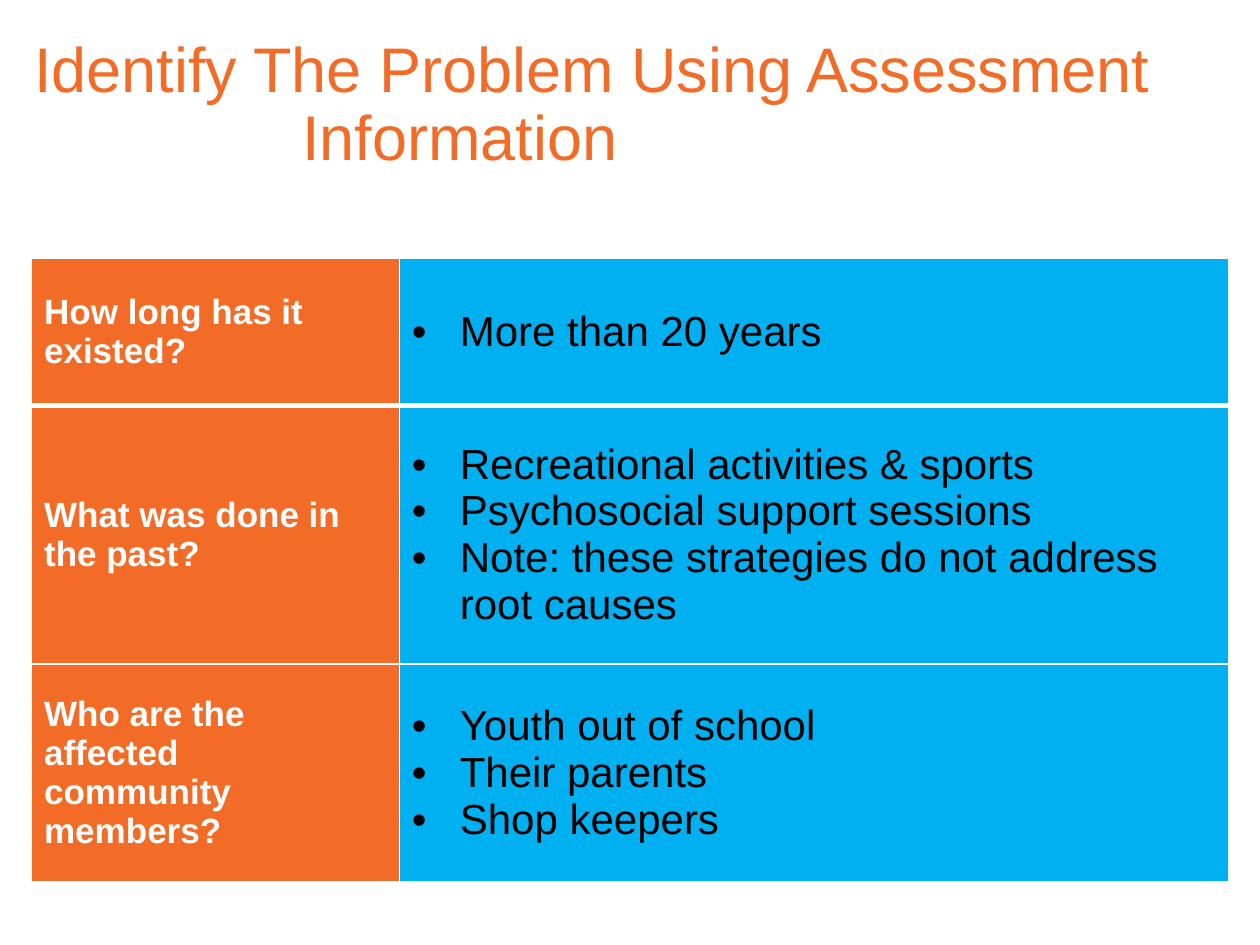
"""Build the slide that identifies the problem using assessment information."""
from lxml.etree import SubElement
from pptx import Presentation
from pptx.dml.color import RGBColor
from pptx.enum.text import MSO_ANCHOR, PP_ALIGN
from pptx.oxml.ns import qn
from pptx.util import Inches, Pt

ORANGE = RGBColor(0xF2, 0x6C, 0x27)
BLUE = RGBColor(0x00, 0xB0, 0xF0)
WHITE = RGBColor(0xFF, 0xFF, 0xFF)
BLACK = RGBColor(0x00, 0x00, 0x00)

ROWS = [
    (1.17, ["How long has it existed?"], ["More than 20 years"]),
    (2.05, ["What was done in the past?"], [
        "Recreational activities & sports",
        "Psychosocial support sessions",
        "Note: these strategies do not address root causes",
    ]),
    (1.73, ["Who are the affected", "community members?"],
     ["Youth out of school", "Their parents", "Shop keepers"]),
]
COLUMNS = [
    {"width": 2.92, "fill": ORANGE, "indent": 0,
     "font": {"name": "Arial", "size": Pt(20), "bold": True}, "color": WHITE},
    {"width": 6.58, "fill": BLUE, "indent": 0.38,
     "font": {"name": "Arial", "size": Pt(24), "bold": False}, "color": BLACK},
]


def add_text(p, text, font, color, indent):
    r = p.add_run()
    r.text = text
    for name, value in font.items():
        setattr(r.font, name, value)
    r.font.color.rgb = color
    pPr = p._p.get_or_add_pPr()
    pPr.set("marL", str(Inches(indent)))
    pPr.set("indent", str(-Inches(indent)))
    return pPr


def add_border(cell, side, width):
    ln = SubElement(cell._tc.get_or_add_tcPr(), qn(f"a:ln{side}"), w=str(Pt(width)))
    fill = SubElement(ln, qn("a:solidFill"))
    SubElement(fill, qn("a:srgbClr"), val=str(WHITE))


prs = Presentation()
prs.slide_width, prs.slide_height = Inches(10), Inches(7.5)
s = prs.slides.add_slide(prs.slide_layouts[5])

title = s.shapes.title
title.left, title.top = Inches(0.17), Inches(0.13)
title.width, title.height = Inches(9.5), Inches(1.42)
tf = title.text_frame
tf.word_wrap = True
tf.vertical_anchor = MSO_ANCHOR.MIDDLE
p = tf.paragraphs[0]
p.alignment = PP_ALIGN.LEFT
p.line_spacing = 0.9
add_text(p, "Identify The Problem Using Assessment Information",
         {"name": "Arial", "size": Pt(36)}, ORANGE, 2.13)

table = s.shapes.add_table(len(ROWS), len(COLUMNS), Inches(0.25), Inches(2.05),
                           Inches(9.5), Inches(4.95)).table
for i, (height, *texts) in enumerate(ROWS):
    table.rows[i].height = Inches(height)
    for j, (column, lines) in enumerate(zip(COLUMNS, texts)):
        table.columns[j].width = Inches(column["width"])
        cell = table.cell(i, j)
        cell.vertical_anchor = MSO_ANCHOR.MIDDLE
        borders = {"L": 1, "R": 1, "T": 3 if i == 1 else 1, "B": 3 if i == 0 else 1}
        for side, width in borders.items():
            add_border(cell, side, width)
        cell.fill.solid()
        cell.fill.fore_color.rgb = column["fill"]
        tf = cell.text_frame
        for n, line in enumerate(lines):
            p = tf.add_paragraph() if n else tf.paragraphs[0]
            pPr = add_text(p, line, column["font"], column["color"], column["indent"])
            if column["indent"]:
                SubElement(pPr, qn("a:buFont"), typeface="Arial")
                SubElement(pPr, qn("a:buChar"), char="•")

prs.save("out.pptx")
